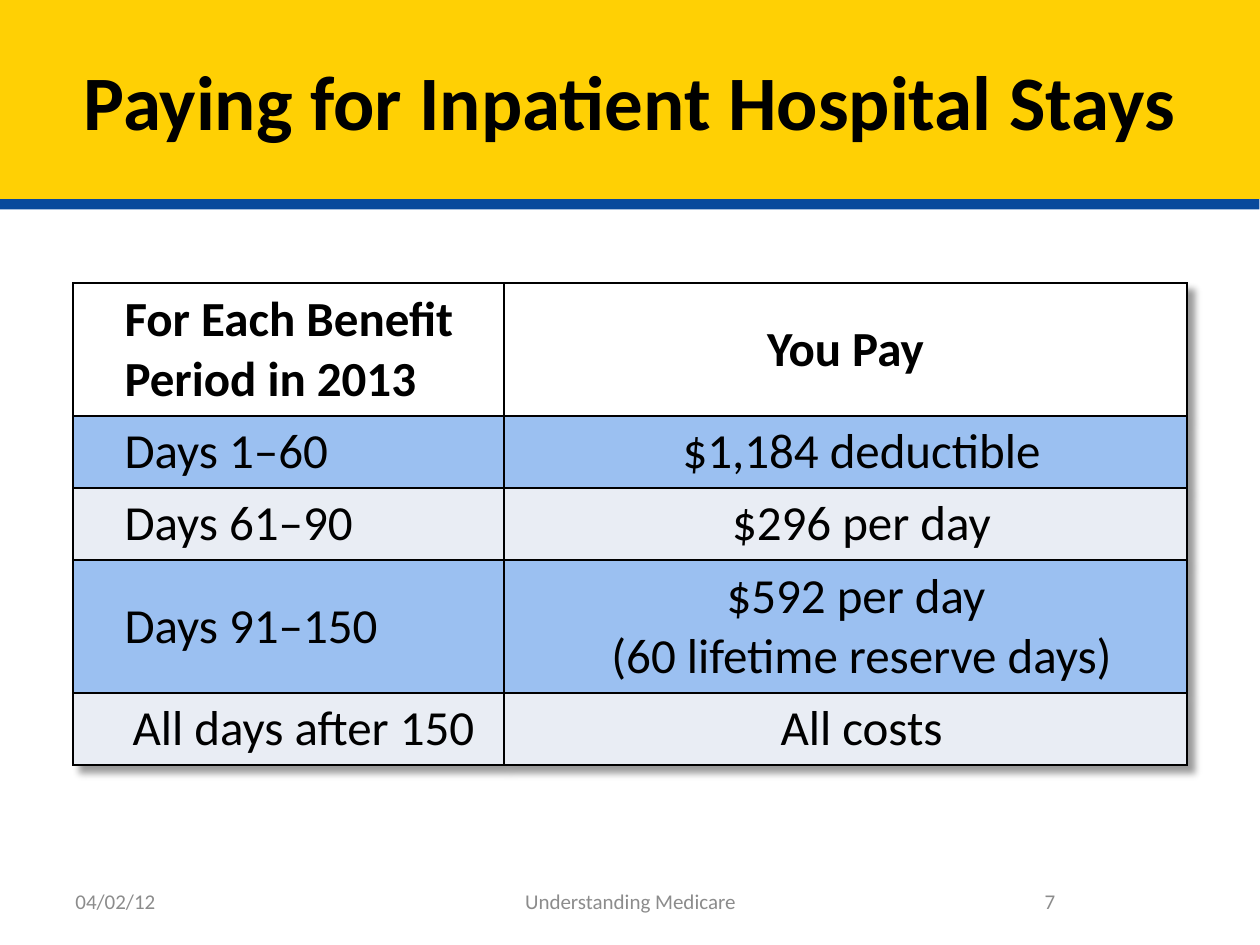
from typing import NamedTuple

from lxml.etree import SubElement
from pptx import Presentation
from pptx.dml.color import RGBColor
from pptx.enum.text import MSO_ANCHOR as Anchor, MSO_AUTO_SIZE as AutoSize, PP_ALIGN as Align
from pptx.oxml.ns import qn
from pptx.util import Emu, Pt

PIXELS_PER_INCH = 126
FONT = "Calibri"
BLACK = RGBColor(0x00, 0x00, 0x00)
WHITE = RGBColor(0xFF, 0xFF, 0xFF)
YELLOW = RGBColor(0xFF, 0xD0, 0x04)
NAVY = RGBColor(0x08, 0x4A, 0x9C)
GREY = RGBColor(0x8C, 0x8C, 0x8C)
BLUE_BAND = RGBColor(0x9B, 0xC0, 0xF1)
PALE_BAND = RGBColor(0xE9, 0xED, 0xF4)


class Footer(NamedTuple):
    text: str
    left: int
    width: int
    align: Align


class BenefitRow(NamedTuple):
    period: str
    payment: str
    height: int
    fill: RGBColor
    period_indent: int = 39
    payment_indent: int = 32
    bold: bool = False


FOOTERS = [
    Footer("04/02/12", 63, 294, Align.LEFT),
    Footer("Understanding Medicare", 431, 399, Align.CENTER),
    Footer("7", 903, 294, Align.CENTER),
]
COLUMN_WIDTHS = [431, 683]
ROWS = [
    BenefitRow("For Each Benefit Period in 2013", "You Pay", 133, WHITE,
               payment_indent=0, bold=True),
    BenefitRow("Days 1–60", "$1,184 deductible", 72, BLUE_BAND),
    BenefitRow("Days 61–90", "$296 per day", 72, PALE_BAND),
    BenefitRow("Days 91–150", "$592 per day \n(60 lifetime reserve days)", 133, BLUE_BAND),
    BenefitRow("All days after 150", "All costs", 72, PALE_BAND, period_indent=47),
]


def px(length: int) -> Emu:
    return Emu(round(length * 914400 / PIXELS_PER_INCH))


def format_text(text_frame, size: int, color: RGBColor, align: Align, bold: bool = False) -> None:
    for paragraph in text_frame.paragraphs:
        paragraph.alignment = align
        for run in paragraph.runs:
            run.font.name = FONT
            run.font.size = Pt(size)
            run.font.bold = bold
            run.font.color.rgb = color


def add_shadow(properties, color: RGBColor, opacity: int, blur: int, distance: int,
               angle: int) -> None:
    """Append an outer shadow; opacity in percent, blur and distance in points."""
    effects = SubElement(properties, qn("a:effectLst"))
    shadow = SubElement(effects, qn("a:outerShdw"), blurRad=str(Pt(blur)), dist=str(Pt(distance)),
                        dir=str(angle * 60000), algn="tl", rotWithShape="0")
    shadow_color = SubElement(shadow, qn("a:srgbClr"), val=str(color))
    SubElement(shadow_color, qn("a:alpha"), val=str(opacity * 1000))


def add_title(slide) -> None:
    title = slide.shapes.title
    title.left, title.top, title.width, title.height = px(0), px(0), px(1260), px(199)
    title.fill.solid()
    title.fill.fore_color.rgb = YELLOW
    add_shadow(title.element.spPr, NAVY, opacity=100, blur=0, distance=6, angle=94)
    text_frame = title.text_frame
    text_frame.text = "Paying for Inpatient Hospital Stays"
    text_frame.auto_size = AutoSize.NONE
    text_frame.vertical_anchor = Anchor.MIDDLE
    format_text(text_frame, 44, BLACK, Align.CENTER, bold=True)


def add_footer(slide, footer: Footer) -> None:
    box = slide.shapes.add_textbox(px(footer.left), px(876), px(footer.width), px(50))
    text_frame = box.text_frame
    text_frame.word_wrap = True
    text_frame.vertical_anchor = Anchor.MIDDLE
    text_frame.text = footer.text
    format_text(text_frame, 12, GREY, footer.align)


def add_borders(cell) -> None:
    """Draw all four edges; they must precede the fill in the cell properties."""
    properties = cell._tc.get_or_add_tcPr()
    for edge in ("lnL", "lnR", "lnT", "lnB"):
        line = SubElement(properties, qn(f"a:{edge}"), w=str(Pt(1)))
        SubElement(SubElement(line, qn("a:solidFill")), qn("a:srgbClr"), val=str(BLACK))


def fill_cell(cell, text: str, row: BenefitRow, align: Align, indent: int) -> None:
    add_borders(cell)
    cell.fill.solid()
    cell.fill.fore_color.rgb = row.fill
    cell.vertical_anchor = Anchor.MIDDLE
    cell.text_frame.text = text
    format_text(cell.text_frame, 28, BLACK, align, row.bold)
    for paragraph in cell.text_frame.paragraphs:
        properties = paragraph._p.get_or_add_pPr()
        properties.set("marL", str(px(indent)))
        properties.set("indent", "0")


def add_benefit_table(slide) -> None:
    height = sum(row.height for row in ROWS)
    frame = slide.shapes.add_table(len(ROWS), len(COLUMN_WIDTHS), px(73), px(283),
                                   px(sum(COLUMN_WIDTHS)), px(height))
    table = frame.table
    table.first_row = table.horz_banding = False
    style_id = table._tbl.tblPr[0]
    add_shadow(table._tbl.tblPr, BLACK, opacity=40, blur=4, distance=6, angle=45)
    table._tbl.tblPr.append(style_id)
    for column, width in zip(table.columns, COLUMN_WIDTHS):
        column.width = px(width)
    for index, row in enumerate(ROWS):
        table.rows[index].height = px(row.height)
        fill_cell(table.cell(index, 0), row.period, row, Align.LEFT, row.period_indent)
        fill_cell(table.cell(index, 1), row.payment, row, Align.CENTER, row.payment_indent)


def main() -> None:
    presentation = Presentation()
    presentation.slide_width, presentation.slide_height = px(1260), px(945)
    slide = presentation.slides.add_slide(presentation.slide_layouts[5])
    add_title(slide)
    for footer in FOOTERS:
        add_footer(slide, footer)
    add_benefit_table(slide)
    presentation.save("out.pptx")


if __name__ == "__main__":
    main()
